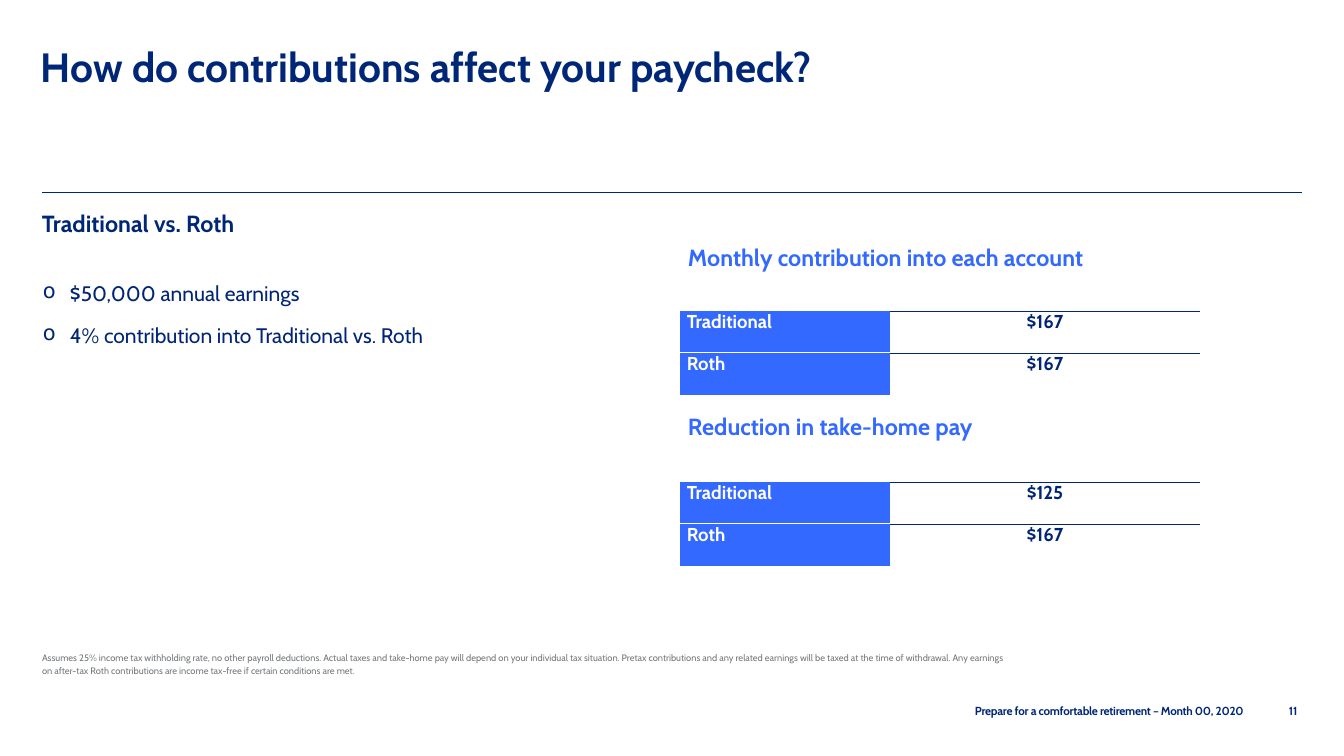
import pptx
import pptx.dml.color
import pptx.enum.text
import pptx.oxml
import pptx.oxml.ns
import pptx.util

SCALE = 914400 / 84
FONT = "Cabin"
NO_STYLE = "{2D5ABB26-0587-4C30-8999-92F81FD0307C}"
COLORS = {"navy": "002677", "ink": "002577", "blue": "3369FF", "gray": "75787B", "white": "FFFFFF"}


def px(n):
    """Turn px into EMU."""
    return pptx.util.Emu(round(n * SCALE))


def rgb(name):
    """Look up a named colour."""
    return pptx.dml.color.RGBColor.from_string(COLORS[name])


def xml(tag, **attrs):
    """Make a drawing element with attributes."""
    el = pptx.oxml.parse_xml("<%s %s/>" % (tag, pptx.oxml.ns.nsdecls("a")))
    for key, value in attrs.items():
        el.set(key, str(value))
    return el


def style(p, size, color, bold=False, spacing=0):
    """Format every run of a paragraph."""
    for r in p.runs:
        r.font.name = FONT
        r.font.size = pptx.util.Pt(size)
        r.font.bold = bold
        r.font.color.rgb = rgb(color)
        if spacing:
            r._r.get_or_add_rPr().set("spc", str(spacing))


def add_text(s, box, lines, size, color, bold=False, spacing=0):
    """Add a text box without insets and return its paragraphs."""
    tf = s.shapes.add_textbox(*map(px, box)).text_frame
    tf.margin_left = tf.margin_top = tf.margin_right = tf.margin_bottom = 0
    tf.word_wrap = True
    tf.text = "\n".join(lines)
    for p in tf.paragraphs:
        style(p, size, color, bold, spacing)
    return tf.paragraphs


def add_header(s, x, y, w, h):
    """Add the title and the rule under it."""
    add_text(s, (x, y, w, 43), ["How do contributions affect your paycheck?"], 35, "navy", True, -3)
    rule = s.shapes.add_connector(pptx.enum.shapes.MSO_CONNECTOR.STRAIGHT, px(x + 1), px(y + h), px(x + w), px(y + h))
    rule.line.color.rgb = rgb("navy")
    rule.line.width = pptx.util.Pt(0.5)
    rule._element.spPr.append(xml("a:effectLst"))


def add_assumptions(s, x, y, w, h):
    """Add the subheading and its bullets."""
    lines = ["Traditional vs. Roth", "$50,000 annual earnings", "4% contribution into Traditional vs. Roth"]
    heading, *bullets = add_text(s, (x, y, w, h), lines, 20, "navy", True)
    for p, gap in zip(bullets, (37.5, 14.4)):
        pPr = p._p.get_or_add_pPr()
        pPr.set("marL", str(px(28)))
        pPr.set("indent", str(-px(27)))
        pPr.append(xml("a:buChar", char="o"))
        p.space_before = pptx.util.Pt(gap)
        style(p, 18, "ink")


def set_border(cell, side, color, width):
    """Draw one border of a cell."""
    ln = xml("a:" + side, w=pptx.util.Pt(width))
    fill = xml("a:solidFill")
    fill.append(xml("a:srgbClr", val=COLORS[color]))
    ln.append(fill)
    cell._tc.get_or_add_tcPr().append(ln)


def set_cell(cell, text, size, color, indent=0, fill=None, borders=()):
    """Write and format one table cell."""
    cell.margin_left = px(indent)
    cell.margin_top = cell.margin_right = cell.margin_bottom = 0
    cell.text = text
    style(cell.text_frame.paragraphs[0], size, color, True)
    for border in borders:
        set_border(cell, *border)
    if fill:
        cell.fill.solid()
        cell.fill.fore_color.rgb = rgb(fill)
    else:
        cell.fill.background()


def add_amounts(s, x, y, w, header_h, title, amounts):
    """Add a titled table of account amounts."""
    row_h, label_w = 42, 210
    height = header_h + row_h * len(amounts)
    table = s.shapes.add_table(len(amounts) + 1, 2, px(x), px(y), px(w), px(height)).table
    table.first_row = table.horz_banding = False
    table._tbl.tblPr.find(pptx.oxml.ns.qn("a:tableStyleId")).text = NO_STYLE
    for col, width in zip(table.columns, (label_w, w - label_w)):
        col.width = px(width)
    for i, row in enumerate(table.rows):
        row.height = px(row_h if i else header_h)
    table.cell(0, 0).merge(table.cell(0, 1))
    set_cell(table.cell(0, 0), title, 20, "blue", 8)
    for i, (account, amount) in enumerate(amounts, 1):
        divider = [("lnT", "white", 1)] if i > 1 else []
        set_cell(table.cell(i, 0), account, 16, "white", 7, "blue", divider)
        value = table.cell(i, 1)
        set_cell(value, amount, 16, "ink", borders=[("lnT", "ink", 0.5)])
        value.text_frame.paragraphs[0].alignment = pptx.enum.text.PP_ALIGN.CENTER


def add_footer(s, x, y, w, h):
    """Add the note, the deck name and the page number."""
    note = ("Assumes 25% income tax withholding rate, no other payroll deductions. Actual taxes and take-home pay "
            "will depend on your individual tax situation. Pretax contributions and any related earnings will be "
            "taxed at the time of withdrawal. Any earnings on after-tax Roth contributions are income tax-free "
            "if certain conditions are met.")
    add_text(s, (x, y, 970, 24), [note], 8, "gray", spacing=-2)[0].line_spacing = 1.15
    base = y + h - 14
    add_text(s, (x + w - 327, base, 294, 14), ["Prepare for a comfortable retirement – Month 00, 2020"],
             10, "navy", True, -19)
    add_text(s, (x + w - 13, base, 18, 14), ["11"], 10, "navy", True)


def main():
    """Build and save the slide."""
    prs = pptx.Presentation()
    prs.slide_width, prs.slide_height = px(1344), px(756)
    s = prs.slides.add_slide(prs.slide_layouts[6])
    add_header(s, 41, 42, 1261, 150)
    add_assumptions(s, 42, 209, 403, 137)
    add_amounts(s, 680, 244, 520, 67, "Monthly contribution into each account",
                [("Traditional", "$167"), ("Roth", "$167")])
    add_amounts(s, 680, 413, 520, 69, "Reduction in take-home pay",
                [("Traditional", "$125"), ("Roth", "$167")])
    add_footer(s, 42, 651, 1260, 67)
    prs.save("out.pptx")


if __name__ == "__main__":
    main()
